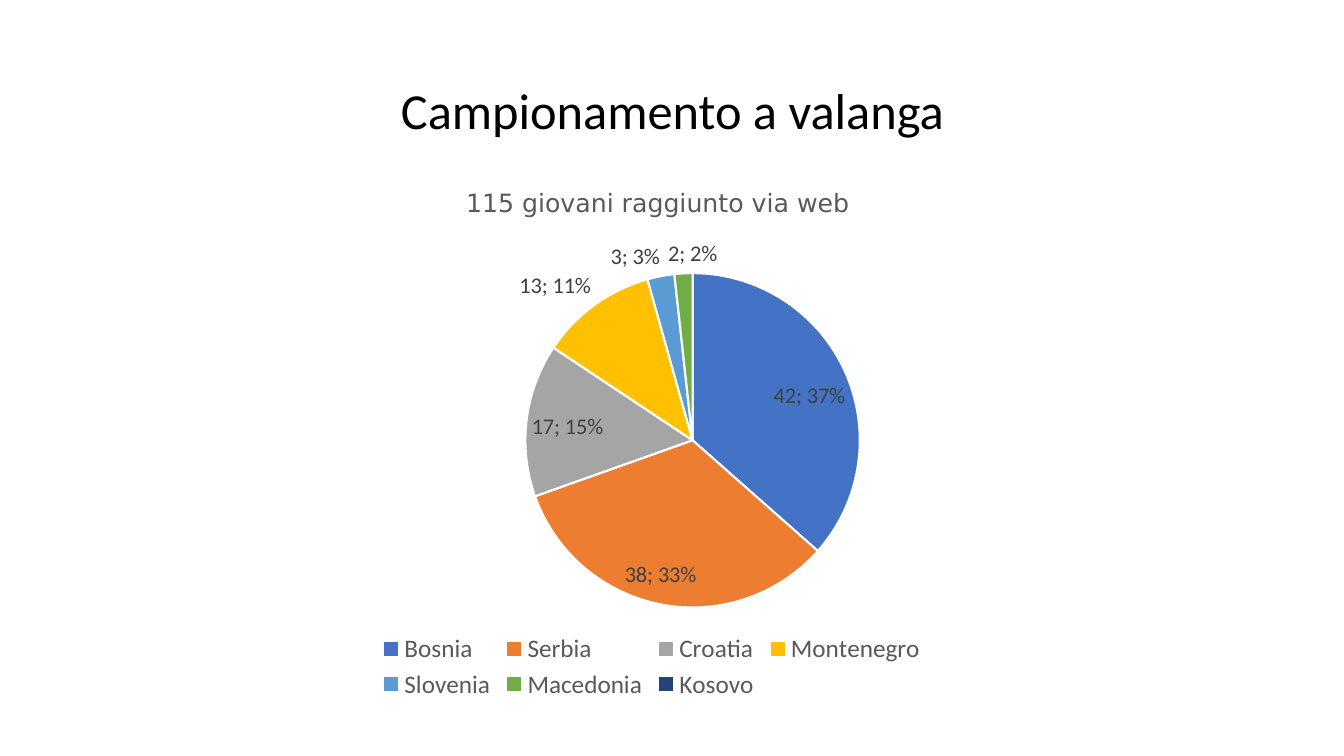
from lxml import etree
from pptx import Presentation
from pptx.chart.data import CategoryChartData
from pptx.dml.color import RGBColor
from pptx.enum.chart import XL_CHART_TYPE, XL_LABEL_POSITION, XL_LEGEND_POSITION
from pptx.enum.text import MSO_ANCHOR, PP_ALIGN
from pptx.oxml import parse_xml
from pptx.oxml.ns import qn
from pptx.util import Inches, Pt

PIE = XL_CHART_TYPE.PIE
BEST_FIT = XL_LABEL_POSITION.BEST_FIT
BOTTOM = XL_LEGEND_POSITION.BOTTOM
MIDDLE = MSO_ANCHOR.MIDDLE
CENTER = PP_ALIGN.CENTER

CHART_NS = "http://schemas.openxmlformats.org/drawingml/2006/chart"
BODY_FONT = "Calibri"
CAPTION_FONT = "DejaVu Sans"
COLORS = {"heading": "000000", "muted": "595959", "label": "404040", "edge": "FFFFFF"}
# country: (young people reached, slice colour)
COUNTRIES = {
    "Bosnia": (42, "4472C4"),
    "Serbia": (38, "ED7D31"),
    "Croatia": (17, "A5A5A5"),
    "Montenegro": (13, "FFC000"),
    "Slovenia": (3, "5B9BD5"),
    "Macedonia": (2, "70AD47"),
    "Kosovo": (0, "264478"),
}


def style_font(font, size, color, name=BODY_FONT):
    font.size = Pt(size)
    font.name = name
    font.bold = False
    font.color.rgb = RGBColor.from_string(color)


def manual_layout(target, **shares):
    """Return a c:layout placing the plot or title by shares of the chart."""
    modes = "".join(f'<c:{axis}Mode val="edge"/>' for axis in "xy")
    sizes = "".join(f'<c:{key} val="{share}"/>' for key, share in shares.items())
    inner = '<c:layoutTarget val="inner"/>' if target == "plot" else ""
    return parse_xml(f'<c:layout xmlns:c="{CHART_NS}"><c:manualLayout>'
                     f'{inner}{modes}{sizes}</c:manualLayout></c:layout>')


def replace_layout(parent, layout, index):
    for old in parent.findall(qn("c:layout")):
        parent.remove(old)
    parent.insert(index, layout)


def add_heading(slide, box, text):
    frame = slide.shapes.add_textbox(*box).text_frame
    frame.word_wrap = True
    frame.vertical_anchor = MIDDLE
    heading = frame.paragraphs[0]
    heading.text = text
    heading.alignment = CENTER
    heading.line_spacing = 0.9
    style_font(heading.font, 36, COLORS["heading"])


def color_slices(series):
    for index, (_, color) in enumerate(COUNTRIES.values()):
        look = series.points[index].format
        look.fill.solid()
        look.fill.fore_color.rgb = RGBColor.from_string(color)
        look.line.color.rgb = RGBColor.from_string(COLORS["edge"])
        look.line.width = Pt(1.5)


def label_slices(series):
    """Show value and percentage on every slice that is not empty."""
    labels = series.data_labels
    labels.show_value = True
    labels.show_percentage = True
    labels.position = BEST_FIT
    style_font(labels.font, 16, COLORS["label"])
    root = labels._element
    separator = etree.Element(qn("c:separator"))
    separator.text = "; "
    last_flag = root.find(qn("c:showBubbleSize"))
    if last_flag is None:
        last_flag = root.find(qn("c:showPercent"))
    last_flag.addnext(separator)
    empty = [i for i, (count, _) in enumerate(COUNTRIES.values()) if not count]
    for position, index in enumerate(empty):
        root.insert(position, parse_xml(
            f'<c:dLbl xmlns:c="{CHART_NS}"><c:idx val="{index}"/>'
            '<c:delete val="1"/></c:dLbl>'))


def add_country_pie(slide, box, caption):
    data = CategoryChartData()
    data.categories = list(COUNTRIES)
    data.add_series("Series 1", [count for count, _ in COUNTRIES.values()])
    chart = slide.shapes.add_chart(PIE, *box, data).chart
    style_font(chart.font, 10, COLORS["heading"])

    chart.has_title = True
    title = chart.chart_title
    title.text_frame.text = caption
    style_font(title.text_frame.paragraphs[0].font, 18, COLORS["muted"], CAPTION_FONT)
    replace_layout(title._element, manual_layout("title", x=0.29, y=0.03), 1)
    title.include_in_layout = False

    chart.has_legend = True
    chart.legend.position = BOTTOM
    chart.legend.include_in_layout = False
    style_font(chart.legend.font, 18, COLORS["muted"])

    plot = chart.plots[0]
    plot.vary_by_categories = True
    color_slices(plot.series[0])
    label_slices(plot.series[0])
    plot_area = chart._chartSpace.chart.plotArea
    replace_layout(plot_area, manual_layout("plot", x=0.36, y=0.2, w=0.37, h=0.62), 0)


def main():
    deck = Presentation()
    deck.slide_width, deck.slide_height = Inches(13.33), Inches(7.5)
    slide = deck.slides.add_slide(deck.slide_layouts[6])
    heading_box = [Inches(n) for n in (0.92, 0.4, 11.5, 1.45)]
    pie_box = [Inches(n) for n in (1.97, 1.64, 8.99, 5.35)]
    add_heading(slide, heading_box, "Campionamento a valanga")
    add_country_pie(slide, pie_box, "115 giovani raggiunto via web")
    deck.save("out.pptx")


if __name__ == "__main__":
    main()
